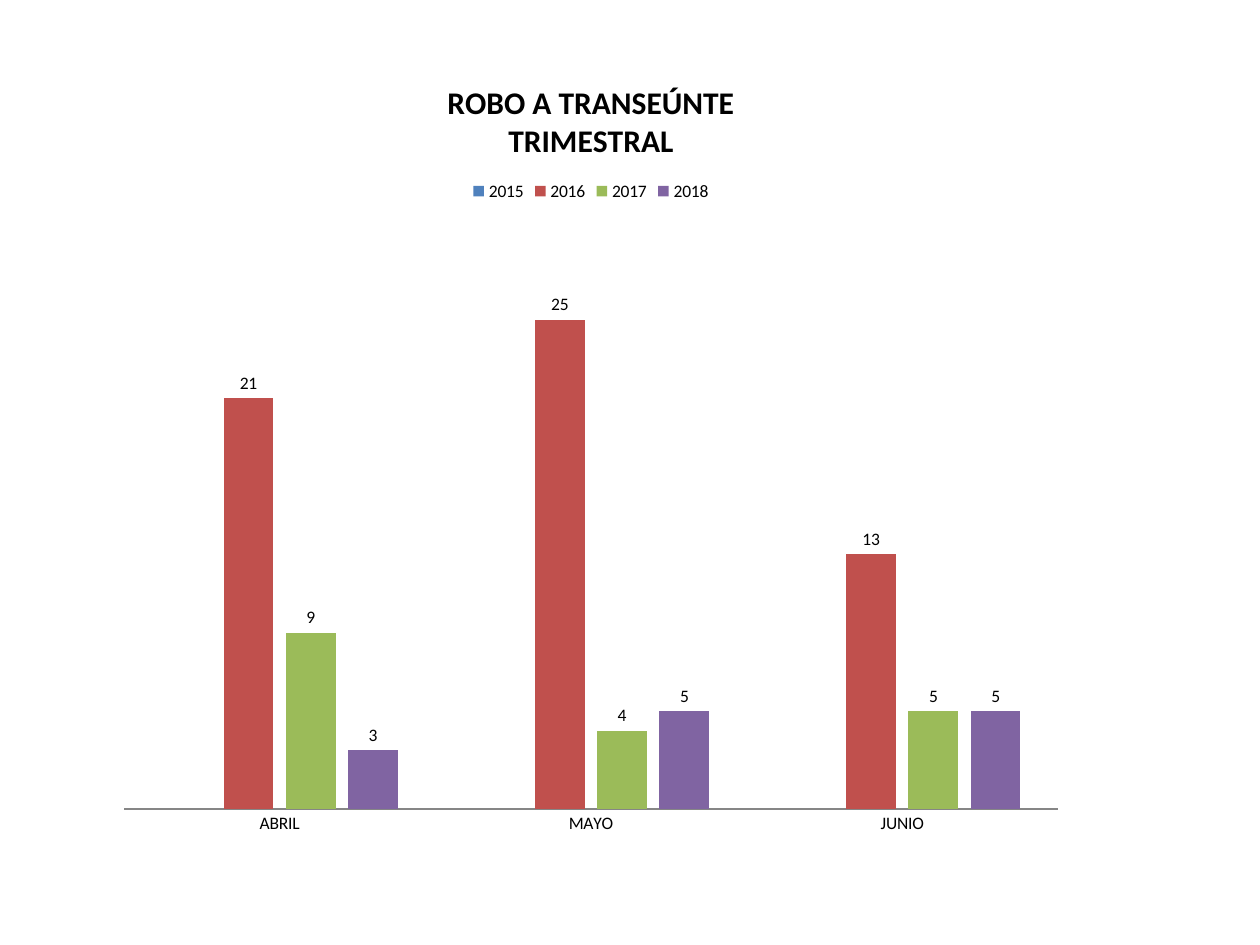
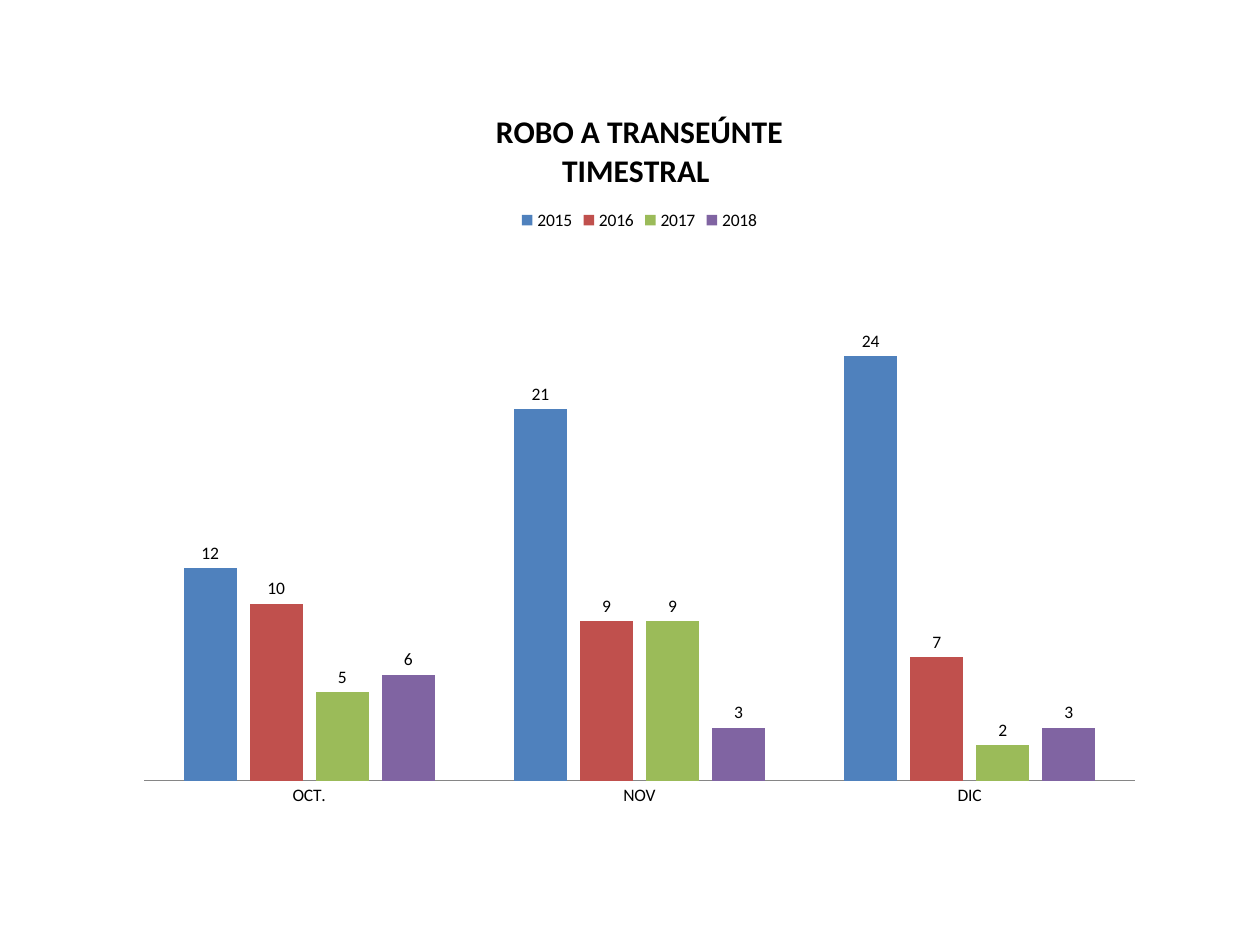
import pptx
import pptx.chart.data
import pptx.dml.color
import pptx.enum.chart
import pptx.util

WIDTH, HEIGHT = pptx.util.Inches(10), pptx.util.Inches(7.5)
FONT = "Calibri"
TEXT, AXIS = "000000", "868686"
YEAR_COLORS = {"2015": "4F81BD", "2016": "C0504D", "2017": "9BBB59", "2018": "8064A2"}
SCALE_MAX = 30


def rgb(value):
    return pptx.dml.color.RGBColor.from_string(value)


def style_font(font, size, bold=False):
    font.name = FONT
    font.size = pptx.util.Pt(size)
    font.bold = bold
    font.color.rgb = rgb(TEXT)


def add_title(chart, lines):
    tf = chart.chart_title.text_frame
    for i, line in enumerate(lines):
        p = tf.add_paragraph() if i else tf.paragraphs[0]
        r = p.add_run()
        r.text = line
        style_font(r.font, 18, bold=True)
    chart.chart_title.include_in_layout = False


def style_axes(chart):
    months, counts = chart.category_axis, chart.value_axis
    months.major_tick_mark = pptx.enum.chart.XL_TICK_MARK.NONE
    months.format.line.color.rgb = rgb(AXIS)
    months.format.line.width = pptx.util.Pt(0.75)
    counts.minimum_scale, counts.maximum_scale = 0, SCALE_MAX
    counts.has_major_gridlines = False
    counts.visible = False


def style_columns(plot):
    plot.gap_width = 150
    plot.overlap = -25
    plot.vary_by_categories = False
    for series in plot.series:
        series.format.fill.solid()
        series.format.fill.fore_color.rgb = rgb(YEAR_COLORS[series.name])
        series.invert_if_negative = False
        labels = series.data_labels
        labels.show_value = True
        labels.position = pptx.enum.chart.XL_LABEL_POSITION.OUTSIDE_END
        style_font(labels.font, 10)


def add_quarter_chart(slide, box, title, months, counts):
    """Draw robberies per month and year; box holds shares of the slide's size."""
    data = pptx.chart.data.CategoryChartData()
    data.categories = months
    for year, values in zip(YEAR_COLORS, counts):
        data.add_series(year, values)
    left, top, width, height = box
    chart = slide.shapes.add_chart(
        pptx.enum.chart.XL_CHART_TYPE.COLUMN_CLUSTERED,
        int(left * WIDTH), int(top * HEIGHT), int(width * WIDTH), int(height * HEIGHT),
        data).chart
    style_font(chart.font, 10)
    add_title(chart, title)
    chart.has_legend = True
    chart.legend.position = pptx.enum.chart.XL_LEGEND_POSITION.TOP
    chart.legend.include_in_layout = False
    style_axes(chart)
    style_columns(chart.plots[0])


def main():
    prs = pptx.Presentation()
    prs.slide_width, prs.slide_height = WIDTH, HEIGHT
    quarters = [
        ((0.083, 0.059, 0.772, 0.84), ["ROBO A TRANSEÚNTE", "TRIMESTRAL"],
         ["ABRIL", "MAYO", "JUNIO"],
         [(None, None, None), (21, 25, 13), (9, 4, 5), (3, 5, 5)]),
        ((0.098, 0.091, 0.819, 0.777), ["ROBO A TRANSEÚNTE", "TIMESTRAL "],
         ["OCT.", "NOV", "DIC"],
         [(12, 21, 24), (10, 9, 7), (5, 9, 2), (6, 3, 3)]),
    ]
    for quarter in quarters:
        slide = prs.slides.add_slide(prs.slide_layouts[6])
        add_quarter_chart(slide, *quarter)
    prs.save("out.pptx")


if __name__ == "__main__":
    main()
